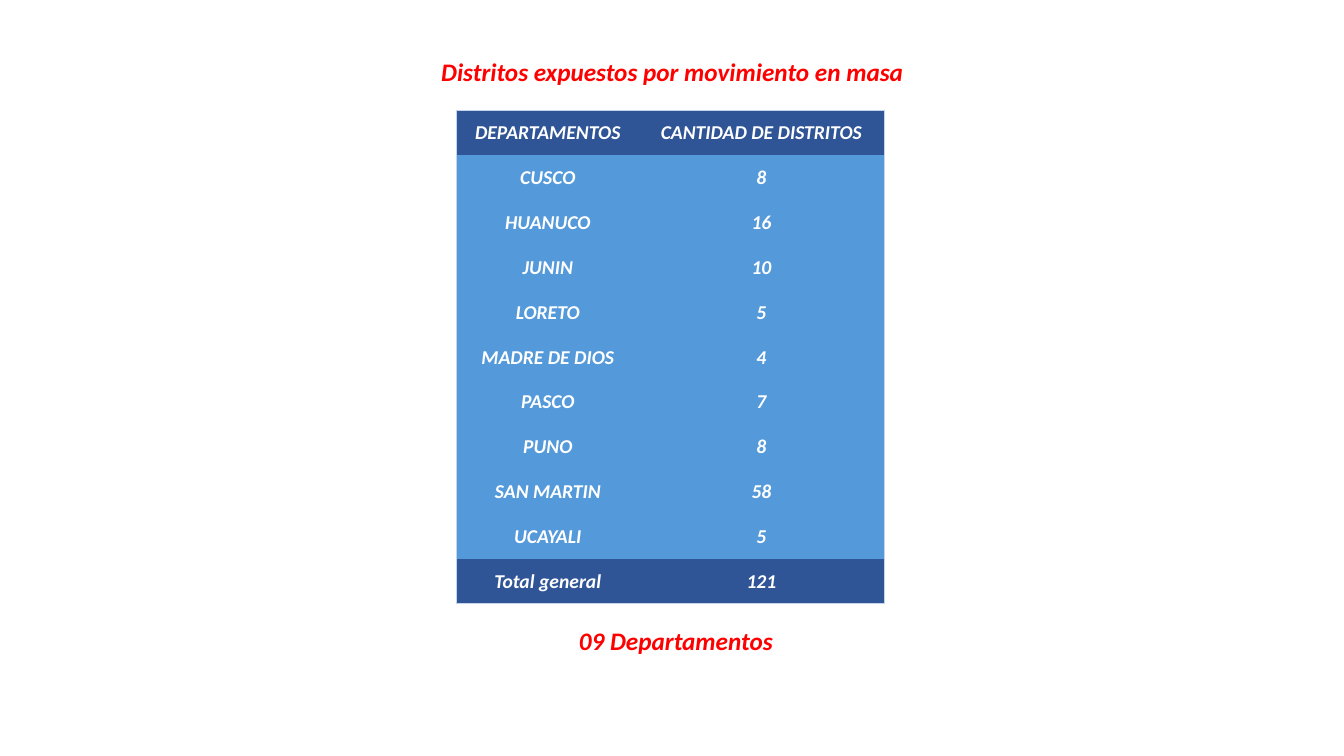
from lxml.etree import SubElement as Sub
from pptx import Presentation
from pptx.dml.color import RGBColor as RGB
from pptx.enum.text import MSO_ANCHOR as Anchor, MSO_AUTO_SIZE as Fit, PP_ALIGN as Align
from pptx.oxml.ns import qn
from pptx.util import Pt

HUES = {"red": "FF0000", "white": "FFFFFF", "dark": "2F5597", "blue": "5499DA", "edge": "C4D5EB"}
HEAD = ("DEPARTAMENTOS", "CANTIDAD DE DISTRITOS")
COUNTS = {
    "CUSCO": 8,
    "HUANUCO": 16,
    "JUNIN": 10,
    "LORETO": 5,
    "MADRE DE DIOS": 4,
    "PASCO": 7,
    "PUNO": 8,
    "SAN MARTIN": 58,
    "UCAYALI": 5,
}


class Page:
    font = {"name": "Calibri", "bold": True, "italic": True}
    inset = {"margin_left": Pt(0.5), "margin_right": Pt(0.5), "margin_top": Pt(0.5), "margin_bottom": 0}

    def __init__(self, slide):
        self.slide = slide

    def words(self, frame, text, size, hue):
        para = frame.paragraphs[0]
        para.alignment = Align.CENTER
        run = para.add_run()
        run.text = text
        for key, value in {**self.font, "size": Pt(size)}.items():
            setattr(run.font, key, value)
        run.font.color.rgb = RGB.from_string(HUES[hue])

    def label(self, text, box, wrap):
        frame = self.slide.shapes.add_textbox(*map(Pt, box)).text_frame
        frame.word_wrap = wrap
        frame.auto_size = Fit.SHAPE_TO_FIT_TEXT
        self.words(frame, text, 18, "red")

    def border(self, cell, sides):
        props = cell._tc.get_or_add_tcPr()
        for side, shown in sides.items():
            line = Sub(props, qn(f"a:ln{side}"), w=str(Pt(0.5)))
            if shown:
                fill = Sub(line, qn("a:solidFill"))
                Sub(fill, qn("a:srgbClr"), val=HUES["edge"])
            else:
                Sub(line, qn("a:noFill"))

    def table(self, rows, left, top, widths, high):
        last, end = len(rows) - 1, len(widths) - 1
        box = left, top, sum(widths), high * len(rows)
        table = self.slide.shapes.add_table(len(rows), len(widths), *map(Pt, box)).table
        table.first_row = table.horz_banding = False
        for col, wide in zip(table.columns, widths):
            col.width = Pt(wide)
        for r, row in enumerate(rows):
            table.rows[r].height = Pt(high)
            for c, text in enumerate(row):
                cell = table.cell(r, c)
                self.border(cell, {"L": c == 0, "R": c == end, "T": r == 0, "B": r == last})
                for key, value in {**self.inset, "vertical_anchor": Anchor.MIDDLE}.items():
                    setattr(cell, key, value)
                cell.fill.solid()
                cell.fill.fore_color.rgb = RGB.from_string(HUES["dark" if r in (0, last) else "blue"])
                self.words(cell.text_frame, str(text), 14, "white")


def main():
    deck = Presentation()
    deck.slide_width, deck.slide_height = Pt(960), Pt(540)
    page = Page(deck.slides.add_slide(deck.slide_layouts[6]))
    page.label("Distritos expuestos por movimiento en masa", (306, 36.7, 348.5, 29), False)
    page.label("09 Departamentos", (400.3, 442.8, 165, 29), True)
    rows = [HEAD, *COUNTS.items(), ("Total general", sum(COUNTS.values()))]
    page.table(rows, 326.2, 78.8, (130.2, 175), 32.05)
    deck.save("out.pptx")


if __name__ == "__main__":
    main()
